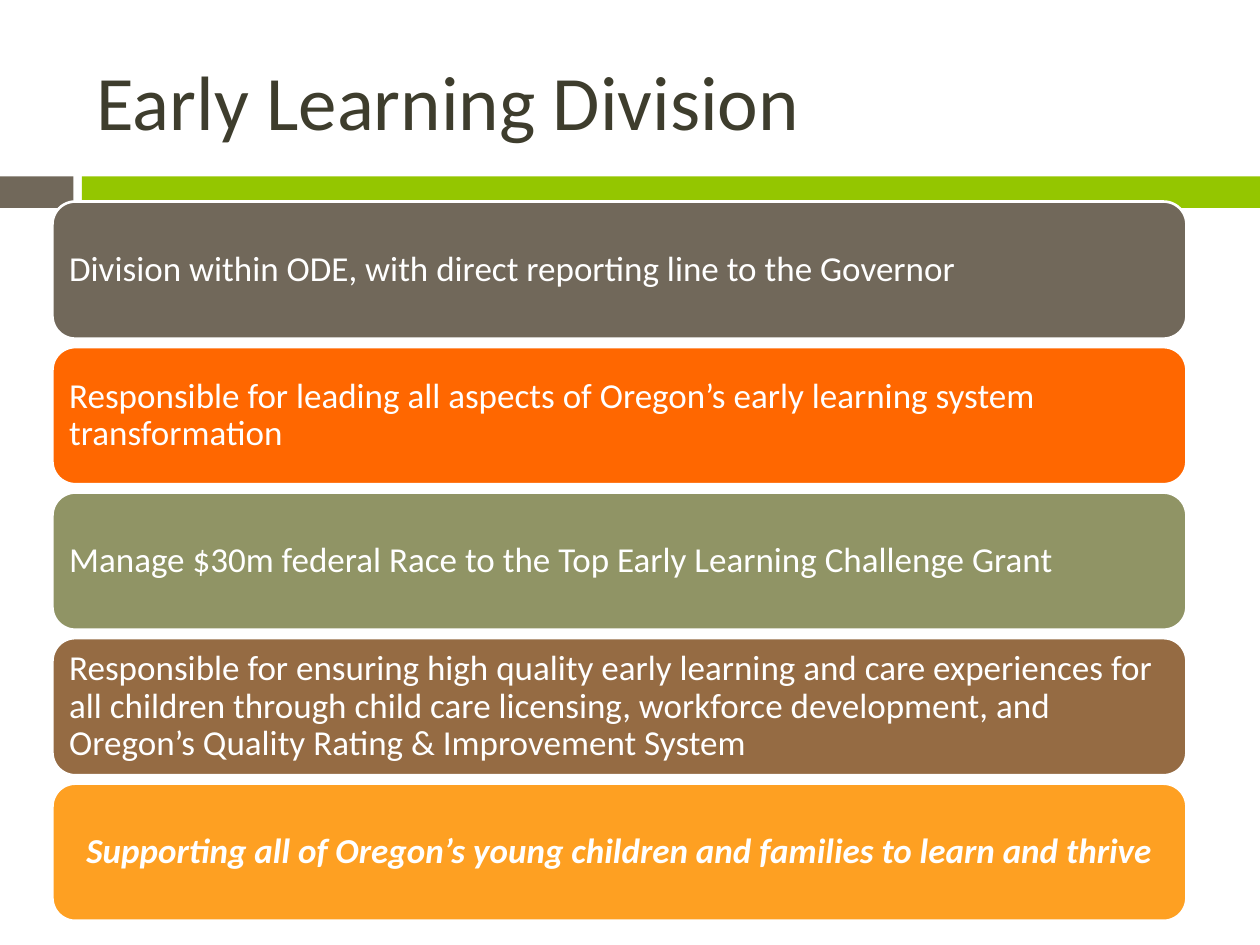
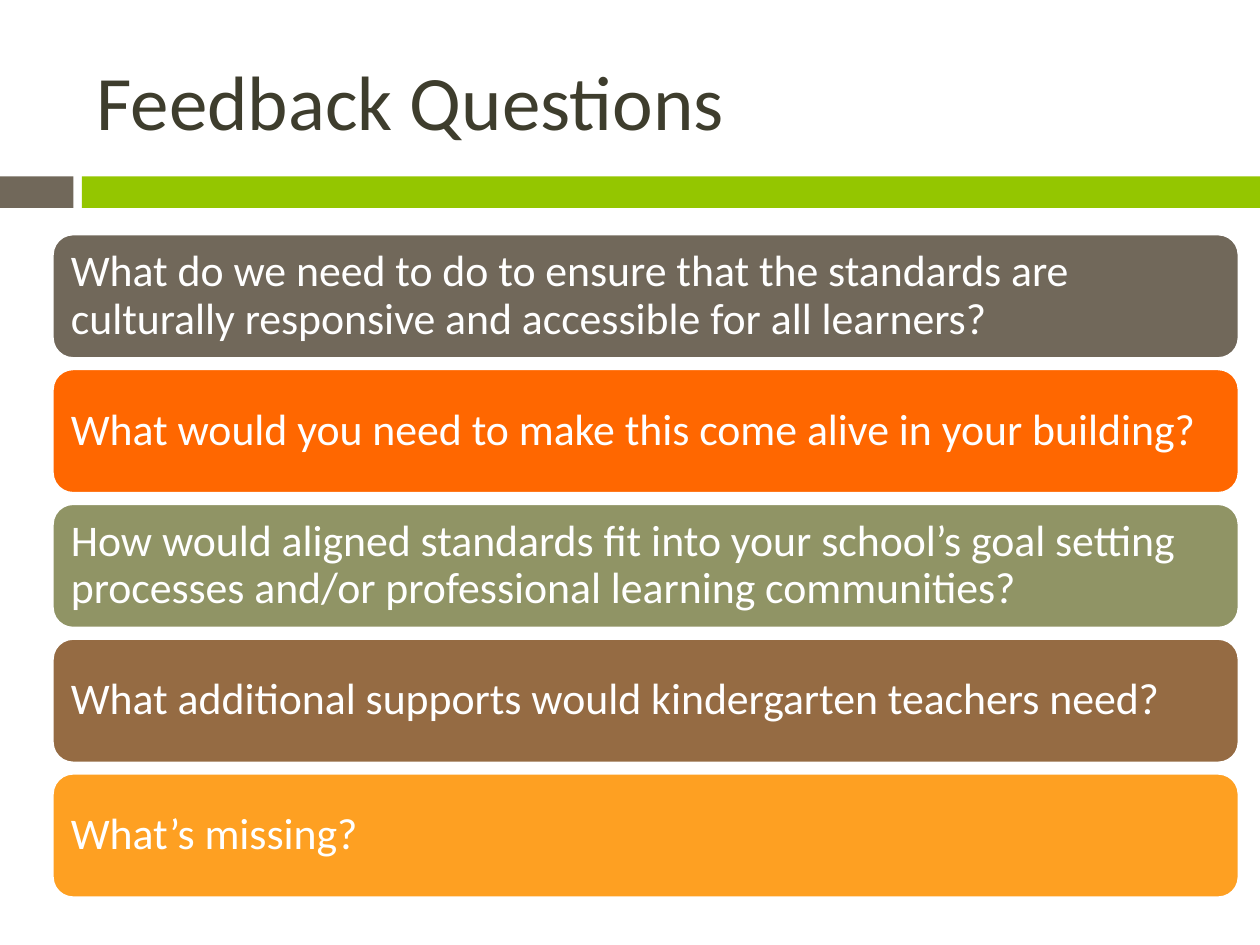
from collections import namedtuple
from dataclasses import dataclass

import pptx
import pptx.dml.color
import pptx.enum.shapes
import pptx.enum.text
import pptx.util

SHAPE = pptx.enum.shapes.MSO_SHAPE
ALIGN = pptx.enum.text.PP_ALIGN
ANCHOR = pptx.enum.text.MSO_ANCHOR

# Boxes are counted in cells of a grid 120 columns wide and 90 rows high.
COLUMNS, ROWS = 120, 90
SLIDE_WIDTH, SLIDE_HEIGHT = pptx.util.Inches(10), pptx.util.Inches(7.5)
TITLE_ONLY = 5

Box = namedtuple("Box", "left top width height")


@dataclass(frozen=True)
class Theme:
    font: str = "Calibri"
    title_size: int = 44
    title_color: str = "3E3D2D"
    card_text: str = "FFFFFF"
    card_outline: str = "FFFFFF"
    outline_width: float = 1.5
    band_tab: str = "71685A"
    band_bar: str = "94C600"
    cards: tuple = ("71685A", "FF6700", "909465", "956B43", "FEA022")


THEME = Theme()
TITLE_BOX = Box(8, 3, 107, 13)
BAND_BOX = Box(0, 16.8, COLUMNS, 3)


def rgb(color):
    return pptx.dml.color.RGBColor.from_string(color)


def to_emu(box):
    """Turn grid cells into slide lengths."""
    cell_width, cell_height = SLIDE_WIDTH / COLUMNS, SLIDE_HEIGHT / ROWS
    return (round(box.left * cell_width), round(box.top * cell_height),
            round(box.width * cell_width), round(box.height * cell_height))


def write_text(shape, text, *, size, color, align=ALIGN.LEFT, bold=False,
               italic=False, line_spacing=1.0, inset=0.1):
    frame = shape.text_frame
    frame.word_wrap = True
    frame.auto_size = pptx.enum.text.MSO_AUTO_SIZE.NONE
    frame.vertical_anchor = ANCHOR.MIDDLE
    frame.margin_left = frame.margin_right = pptx.util.Inches(inset)
    frame.margin_top = frame.margin_bottom = pptx.util.Inches(min(inset, 0.1))
    paragraph = frame.paragraphs[0]
    paragraph.alignment = align
    paragraph.line_spacing = line_spacing
    run = paragraph.add_run()
    run.text = text
    run.font.name = THEME.font
    run.font.size = pptx.util.Pt(size)
    run.font.bold = bold
    run.font.italic = italic
    run.font.color.rgb = rgb(color)


def add_filled_shape(slide, kind, box, fill, outline=None):
    shape = slide.shapes.add_shape(kind, *to_emu(box))
    shape.shadow.inherit = False
    shape.fill.solid()
    shape.fill.fore_color.rgb = rgb(fill)
    if outline:
        shape.line.color.rgb = rgb(outline)
        shape.line.width = pptx.util.Pt(THEME.outline_width)
    else:
        shape.line.fill.background()
    return shape


def add_band(slide, box, tab_width=7, gap=0.8):
    """Draw the short tab and the long bar beside it."""
    bar_offset = tab_width + gap
    add_filled_shape(slide, SHAPE.RECTANGLE, box._replace(width=tab_width),
                     THEME.band_tab)
    add_filled_shape(slide, SHAPE.RECTANGLE,
                     box._replace(left=box.left + bar_offset,
                                  width=box.width - bar_offset),
                     THEME.band_bar)


def add_title(slide, box, text):
    title = slide.shapes.title
    title.left, title.top, title.width, title.height = to_emu(box)
    write_text(title, text, size=THEME.title_size, color=THEME.title_color)


def add_cards(slide, box, texts, *, gap, size, inset, closing_format=None):
    """Stack equal cards in the box; closing_format styles the last one."""
    height = (box.height - gap * (len(texts) - 1)) / len(texts)
    for index, (text, fill) in enumerate(zip(texts, THEME.cards)):
        card_box = box._replace(top=box.top + index * (height + gap),
                                height=height)
        card = add_filled_shape(slide, SHAPE.ROUNDED_RECTANGLE, card_box, fill,
                                THEME.card_outline)
        is_last = index == len(texts) - 1
        extra = closing_format if is_last and closing_format else {}
        write_text(card, text, size=size, color=THEME.card_text,
                   line_spacing=0.9, inset=inset, **extra)


def add_card_slide(presentation, title, texts, box, **card_format):
    slide = presentation.slides.add_slide(
        presentation.slide_layouts[TITLE_ONLY])
    add_band(slide, BAND_BOX)
    add_title(slide, TITLE_BOX, title)
    add_cards(slide, box, texts, **card_format)


def main():
    presentation = pptx.Presentation()
    presentation.slide_width = SLIDE_WIDTH
    presentation.slide_height = SLIDE_HEIGHT

    add_card_slide(
        presentation, "Early Learning Division",
        ["Division within ODE, with direct reporting line to the Governor",
         "Responsible for leading all aspects of Oregon’s early learning "
         "system transformation",
         "Manage $30m federal Race to the Top Early Learning Challenge Grant",
         "Responsible for ensuring high quality early learning and care "
         "experiences for all children through child care licensing, "
         "workforce development, and Oregon’s Quality Rating & Improvement "
         "System",
         "Supporting all of Oregon’s young children and families to learn "
         "and thrive"],
        Box(5, 19.2, 108, 68.5), gap=0.8, size=20, inset=0.08,
        closing_format={"align": ALIGN.CENTER, "bold": True, "italic": True})

    add_card_slide(
        presentation, "Feedback Questions",
        ["What do we need to do to ensure that the standards are culturally "
         "responsive and accessible for all learners?",
         "What would you need to make this come alive in your building?",
         "How would aligned standards fit into your school’s goal setting "
         "processes and/or professional learning communities?",
         "What additional supports would kindergarten teachers need?",
         "What’s missing?"],
        Box(5, 22.3, 113, 63.2), gap=1, size=25, inset=0.1)

    presentation.save("out.pptx")


if __name__ == "__main__":
    main()
